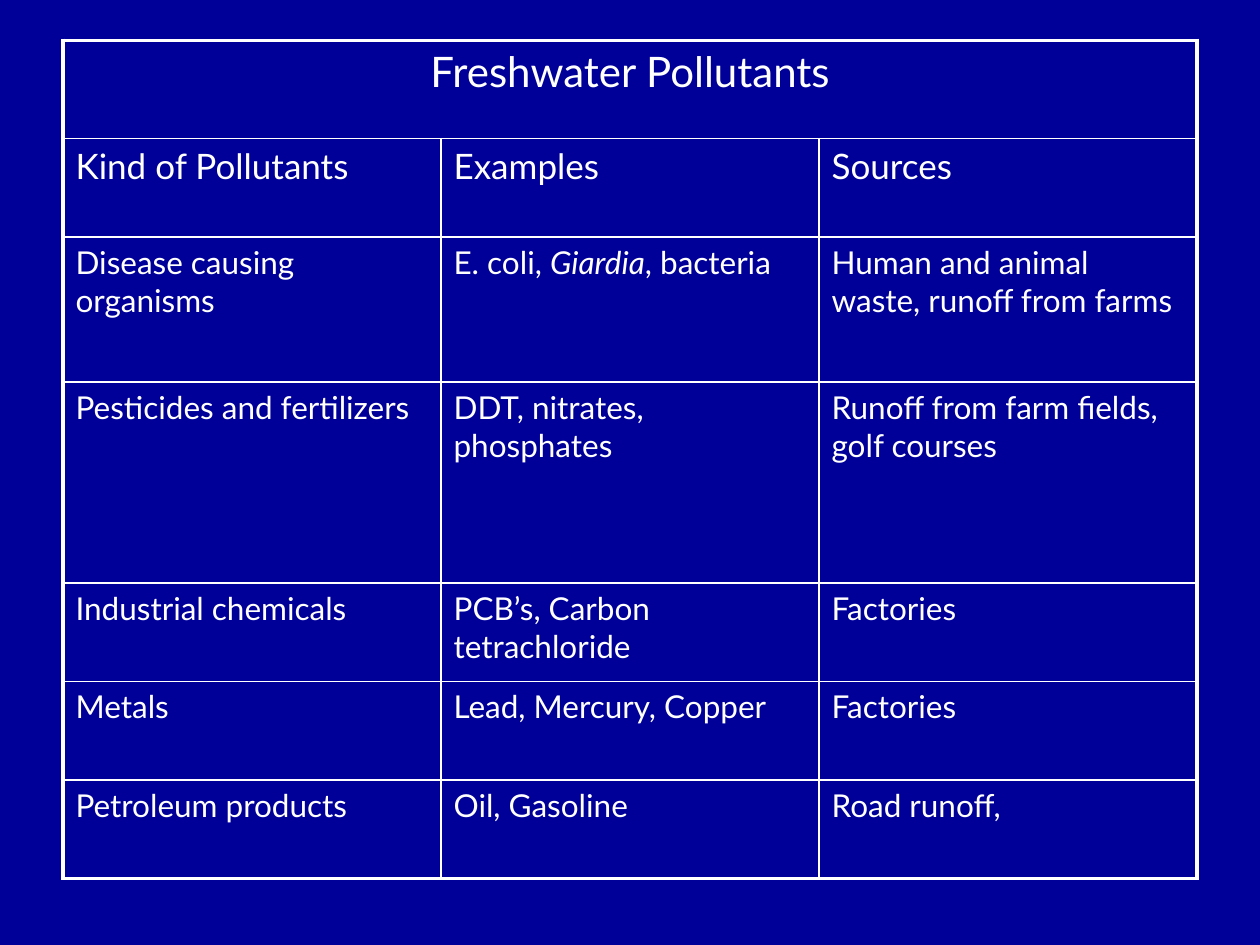
from lxml import etree
from pptx import Presentation
from pptx.dml.color import RGBColor
from pptx.enum import text
from pptx.oxml import ns
from pptx.util import Pt

NAVY, WHITE = "000099", "FFFFFF"
FONT = "Lato"
THICK, THIN = 2.25, 1
LEFT, TOP, COLUMN_WIDTH = 36, 23, 216

TITLE = "Freshwater Pollutants"
HEADINGS = ["Kind of Pollutants", "Examples", "Sources"]
POLLUTANTS = [
    ["Disease causing organisms",
     [("E. coli, ", False), ("Giardia", True), (", bacteria", False)],
     "Human and animal waste, runoff from farms"],
    ["Pesticides and fertilizers", "DDT, nitrates, phosphates",
     "Runoff from farm fields, golf courses"],
    ["Industrial chemicals", "PCB’s, Carbon tetrachloride", "Factories"],
    ["Metals", "Lead, Mercury, Copper", "Factories"],
    ["Petroleum products", "Oil, Gasoline", "Road runoff,"],
]
ROWS = [[TITLE], HEADINGS] + POLLUTANTS
ROW_HEIGHTS = [56.25, 56.25, 82.75, 115, 56.25, 56.25, 56.25]
TITLE_SIZE, HEADING_SIZE, BODY_SIZE = 24, 20, 18


def color(value):
    return RGBColor.from_string(value)


def write(cell, content, size):
    spans = [(content, False)] if isinstance(content, str) else content
    para = cell.text_frame.paragraphs[0]
    for words, italic in spans:
        span = para.add_run()
        span.text = words
        span.font.name = FONT
        span.font.size = Pt(size)
        span.font.bold = False
        span.font.italic = italic
        span.font.color.rgb = color(WHITE)
    return para


def add_borders(cell, widths):
    properties = cell._tc.get_or_add_tcPr()
    for side, width in widths.items():
        line = etree.SubElement(properties, ns.qn(f"a:ln{side}"), w=str(Pt(width)))
        fill = etree.SubElement(line, ns.qn("a:solidFill"))
        etree.SubElement(fill, ns.qn("a:srgbClr"), val=WHITE)


def edge(is_outer):
    return THICK if is_outer else THIN


def main():
    deck = Presentation()
    deck.slide_width, deck.slide_height = Pt(720), Pt(540)
    page = deck.slides.add_slide(deck.slide_layouts[6])
    page.background.fill.solid()
    page.background.fill.fore_color.rgb = color(NAVY)

    last_row, last_column = len(ROWS) - 1, len(HEADINGS) - 1
    table = page.shapes.add_table(
        len(ROWS), len(HEADINGS), Pt(LEFT), Pt(TOP),
        Pt(COLUMN_WIDTH * len(HEADINGS)), Pt(sum(ROW_HEIGHTS))).table
    table.first_row = table.horz_banding = False
    for column in table.columns:
        column.width = Pt(COLUMN_WIDTH)
    for row, height in zip(table.rows, ROW_HEIGHTS):
        row.height = Pt(height)
    table.cell(0, 0).merge(table.cell(0, last_column))

    for r in range(len(ROWS)):
        for c in range(len(HEADINGS)):
            cell = table.cell(r, c)
            add_borders(cell, {
                "L": edge(r == 0 or c == 0),
                "R": edge(r == 0 or c == last_column),
                "T": edge(r == 0),
                "B": edge(r == last_row),
            })
            cell.fill.background()

    sizes = [TITLE_SIZE, HEADING_SIZE] + [BODY_SIZE] * len(POLLUTANTS)
    for r, (contents, size) in enumerate(zip(ROWS, sizes)):
        for c, content in enumerate(contents):
            para = write(table.cell(r, c), content, size)
            if r == 0:
                para.alignment = text.PP_ALIGN.CENTER

    deck.save("out.pptx")


if __name__ == "__main__":
    main()
